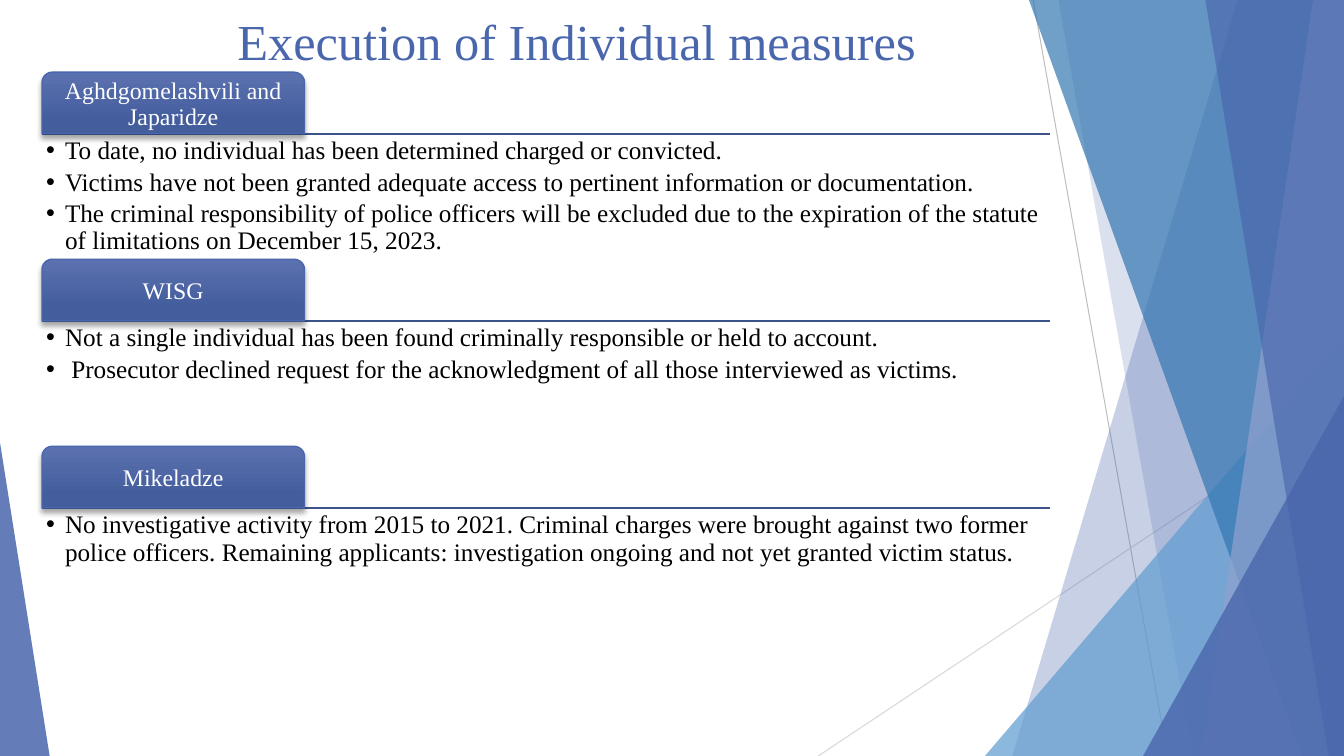
from lxml import etree
from pptx import Presentation
from pptx.dml.color import RGBColor
from pptx.enum.shapes import MSO_CONNECTOR as CONN, MSO_SHAPE as SHAPE
from pptx.enum.text import MSO_ANCHOR as ANCHOR, PP_ALIGN as ALIGN
from pptx.oxml import parse_xml
from pptx.oxml.ns import nsdecls, qn
from pptx.util import Pt

BLUE = RGBColor(0x4A, 0x66, 0xAC)
SKY = RGBColor(0x62, 0x9D, 0xD1)
TEAL = RGBColor(0x34, 0x77, 0xB2)
LILAC = RGBColor(0x90, 0xA2, 0xCF)
RULE = RGBColor(0x3B, 0x52, 0x8A)
TAB_TOP = RGBColor(0x5C, 0x72, 0xB0)
TAB_BOTTOM = RGBColor(0x44, 0x5D, 0x9D)
GREY = RGBColor(0xBF, 0xBF, 0xBF)
PALE_GREY = RGBColor(0xD9, 0xD9, 0xD9)
WHITE = RGBColor(0xFF, 0xFF, 0xFF)
BLACK = RGBColor(0, 0, 0)
FONT = "Times New Roman"
W, H = 960, 540

prs = Presentation()
prs.slide_width, prs.slide_height = Pt(W), Pt(H)
slide = prs.slides.add_slide(prs.slide_layouts[6])
shapes = slide.shapes


def add_line(x1, y1, x2, y2, color, width):
    line = shapes.add_connector(CONN.STRAIGHT, Pt(x1), Pt(y1), Pt(x2), Pt(y2))
    line.line.color.rgb = color
    line.line.width = Pt(width)
    etree.SubElement(line._element.spPr, qn("a:effectLst"))


def style_paragraph(p, size, color, align):
    p.alignment = align
    for r in p.runs:
        r.font.name = FONT
        r.font.size = Pt(size)
        r.font.color.rgb = color


# Background: two thin lines, then translucent shards
add_line(738, 0, 834, H, GREY, 0.75)
add_line(W, 290, 584.5, H, PALE_GREY, 0.75)

# A band runs from its top edge (x1, x2) to its bottom edge (x3, x4);
# a triangle has a box and the place of its tip.
shards = [
    ("band", (884, W, W, 723), None, BLUE, 30),
    ("band", (756, W, W, 852), None, BLUE, 20),
    ("triangle", (703.5, 240, 256.5, 300), 1, SKY, 72),
    ("band", (735, W, W, 930), None, TEAL, 70),
    ("band", (938, W, W, 858), None, LILAC, 70),
    ("band", (861, W, W, 949), None, BLUE, 65),
    ("triangle", (816.5, 283, 143.5, 257), 1, BLUE, 80),
    ("triangle", (0, 316, 35.5, 224), 0, BLUE, 85),
]
for kind, geometry, tip, color, opacity in shards:
    if kind == "band":
        x1, x2, x3, x4 = geometry
        outline = shapes.build_freeform(x1, 0, scale=Pt(1))
        outline.add_line_segments([(x2, 0), (x3, H), (x4, H)], close=True)
        s = outline.convert_to_shape()
    else:
        s = shapes.add_shape(SHAPE.ISOSCELES_TRIANGLE, *map(Pt, geometry))
        s.adjustments[0] = tip
    s.shadow.inherit = False
    s.fill.solid()
    s.fill.fore_color.rgb = color
    s.line.fill.background()
    clr = s._element.spPr.find(qn("a:solidFill"))[0]
    etree.SubElement(clr, qn("a:alpha"), val=str(opacity * 1000))

# Title
title = shapes.add_textbox(Pt(73.5), 0, Pt(677), Pt(104))
tf = title.text_frame
tf.word_wrap = True
tf.margin_top = Pt(7)
tf.text = "Execution of Individual measures"
style_paragraph(tf.paragraphs[0], 36, BLUE, ALIGN.CENTER)

# Cases: a tab on a rule, with bullets below
cases = [
    ("Aghdgomelashvili and Japaridze", [
        "To date, no individual has been determined charged or convicted.",
        "Victims have not been granted adequate access to pertinent "
        "information or documentation.",
        "The criminal responsibility of police officers will be excluded due "
        "to the expiration of the statute of limitations on December 15, 2023.",
    ]),
    ("WISG", [
        "Not a single individual has been found criminally responsible or "
        "held to account.",
        " Prosecutor declined request for the acknowledgment of all those "
        "interviewed as victims.",
    ]),
    ("Mikeladze", [
        "No investigative activity from 2015 to 2021. Criminal charges were "
        "brought against two former police officers. Remaining applicants: "
        "investigation ongoing and not yet granted victim status.",
    ]),
]
LEFT, WIDTH, TAB_W, TAB_H = 30, 720, 187.5, 44
FIRST_RULE, PITCH, BODY_H = 95.6, 133.6, 87

for i, (name, bullets) in enumerate(cases):
    rule_y = FIRST_RULE + i * PITCH
    add_line(LEFT, rule_y, LEFT + WIDTH, rule_y, RULE, 1.5)

    tab = shapes.add_shape(SHAPE.ROUND_2_SAME_RECTANGLE, Pt(LEFT),
                           Pt(rule_y - TAB_H), Pt(TAB_W), Pt(TAB_H))
    tab.fill.gradient()
    tab.fill.gradient_angle = 270
    stops = tab.fill.gradient_stops
    for stop, color, position in zip(stops, (TAB_TOP, TAB_BOTTOM), (0, 0.78)):
        stop.color.rgb = color
        stop.position = position
    tab.line.color.rgb = BLUE
    tab.line.width = Pt(1)
    tab._element.spPr.append(parse_xml(
        f'<a:effectLst {nsdecls("a")}>'
        f'<a:outerShdw blurRad="{Pt(4)}" dist="{Pt(3)}" dir="5400000" rotWithShape="0">'
        '<a:srgbClr val="000000"><a:alpha val="35000"/></a:srgbClr>'
        '</a:outerShdw></a:effectLst>'))
    tab.text_frame.text = name
    tab.text_frame.vertical_anchor = ANCHOR.MIDDLE
    style_paragraph(tab.text_frame.paragraphs[0], 17, WHITE, ALIGN.CENTER)

    body = shapes.add_textbox(Pt(LEFT), Pt(rule_y), Pt(WIDTH), Pt(BODY_H))
    body.text_frame.text = "\n".join(bullets)
    for p in body.text_frame.paragraphs:
        style_paragraph(p, 18, BLACK, ALIGN.LEFT)
        p.space_after = Pt(3)
        pPr = p._p.get_or_add_pPr()
        pPr.set("marL", str(Pt(13.5)))
        pPr.set("indent", str(-Pt(13.5)))
        etree.SubElement(pPr, qn("a:buFont"), typeface="Arial")
        etree.SubElement(pPr, qn("a:buChar"), char="•")

    for tf in (tab.text_frame, body.text_frame):
        tf.word_wrap = True
        tf.margin_left = tf.margin_right = Pt(3)
        tf.margin_top = tf.margin_bottom = Pt(3)
        for p in tf.paragraphs:
            p.line_spacing = 0.9

prs.save("out.pptx")
